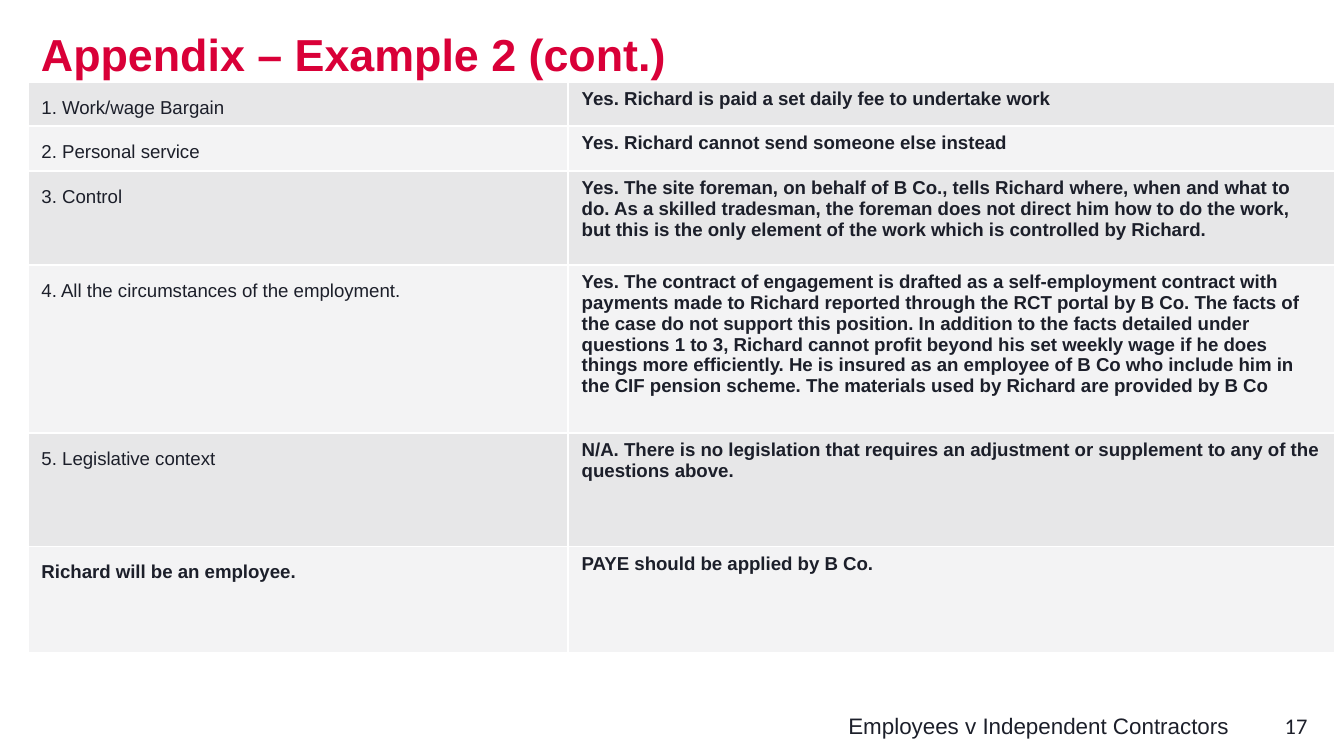
"""Build the appendix slide that tests whether a worker is an employee."""
from dataclasses import dataclass

from lxml.etree import SubElement
from pptx import Presentation
from pptx.dml.color import RGBColor as Color
from pptx.enum.text import MSO_ANCHOR as Anchor, MSO_AUTO_SIZE as AutoSize, PP_ALIGN as Align
from pptx.oxml.ns import qn
from pptx.slide import Slide
from pptx.util import Cm, Length, Pt


@dataclass(frozen=True)
class Theme:
    heading: Color = Color.from_string("D90038")
    text: Color = Color.from_string("1C1F2A")
    border: str = "FFFFFF"
    bands: tuple = (Color.from_string("E7E7E8"), Color.from_string("F3F3F4"))
    font: str = "Arial"
    number_font: str = "Calibri"
    title_size: Length = Pt(24)
    footer_size: Length = Pt(12)
    table_size: Length = Pt(10)
    question_spacing: Length = Pt(15.8)
    border_width: Length = Pt(1)


@dataclass(frozen=True)
class Row:
    question: str
    answer: str
    height: Length
    bold_question: bool = False


@dataclass(frozen=True)
class Label:
    text: str
    left: Length
    width: Length
    font: str
    align: Align = Align.LEFT


THEME = Theme()
TABLE_LEFT, TABLE_TOP = Cm(0.53), Cm(1.55)
COLUMN_WIDTHS = (Cm(10.21), Cm(14.48))
ROWS = (
    Row("1. Work/wage Bargain", "Yes. Richard is paid a set daily fee to undertake work", Cm(0.83)),
    Row("2. Personal service", "Yes. Richard cannot send someone else instead", Cm(0.85)),
    Row("3. Control",
        "Yes. The site foreman, on behalf of B Co., tells Richard where, when and what to do. "
        "As a skilled tradesman, the foreman does not direct him how to do the work, but this "
        "is the only element of the work which is controlled by Richard.", Cm(1.78)),
    Row("4. All the circumstances of the employment.",
        "Yes. The contract of engagement is drafted as a self-employment contract with payments "
        "made to Richard reported through the RCT portal by B Co. The facts of the case do not "
        "support this position. In addition to the facts detailed under questions 1 to 3, Richard "
        "cannot profit beyond his set weekly wage if he does things more efficiently. He is insured "
        "as an employee of B Co who include him in the CIF pension scheme. The materials used by "
        "Richard are provided by B Co", Cm(3.18)),
    Row("5. Legislative context",
        "N/A. There is no legislation that requires an adjustment or supplement to any of the "
        "questions above.", Cm(2.14)),
    Row("Richard will be an employee.", "PAYE should be applied by B Co.", Cm(2), True),
)
LABELS = (
    Label("Employees v Independent Contractors ", Cm(15.57), Cm(8.03), THEME.font, Align.RIGHT),
    Label("17", Cm(24.03), Cm(1.37), THEME.number_font),
)


def style(paragraph, size: Length, color: Color, name: str = THEME.font, bold: bool = False) -> None:
    """Set the font of a whole paragraph."""
    font = paragraph.font
    font.name, font.size, font.bold = name, size, bold
    font.color.rgb = color


def add_title(slide: Slide, text: str) -> None:
    """Place and format the title placeholder."""
    title = slide.shapes.title
    title.left, title.top, title.width, title.height = Cm(0.52), Cm(0.3), Cm(24.87), Cm(1.25)
    frame = title.text_frame
    frame.text = text
    frame.auto_size = AutoSize.NONE
    frame.vertical_anchor = Anchor.TOP
    frame.margin_top = Cm(0.21)
    paragraph = frame.paragraphs[0]
    paragraph.alignment = Align.LEFT
    style(paragraph, THEME.title_size, THEME.heading, bold=True)


def add_label(slide: Slide, label: Label) -> None:
    """Add one text box on the footer line."""
    frame = slide.shapes.add_textbox(label.left, Cm(13.34), label.width, Cm(0.7)).text_frame
    frame.word_wrap = True
    frame.text = label.text
    paragraph = frame.paragraphs[0]
    paragraph.alignment = label.align
    style(paragraph, THEME.footer_size, THEME.text, label.font)


def fill_cell(cell, text: str, bold: bool, band: Color) -> None:
    """Write one cell with its borders and band colour."""
    properties = cell._tc.get_or_add_tcPr()
    for side in ("a:lnL", "a:lnR", "a:lnT", "a:lnB"):
        line = SubElement(properties, qn(side), w=str(THEME.border_width))
        SubElement(SubElement(line, qn("a:solidFill")), qn("a:srgbClr"), val=THEME.border)
    cell.fill.solid()
    cell.fill.fore_color.rgb = band
    cell.text = text
    style(cell.text_frame.paragraphs[0], THEME.table_size, THEME.text, bold=bold)


def add_table(slide: Slide, rows: tuple[Row, ...]) -> None:
    """Add the table of questions and answers."""
    table = slide.shapes.add_table(
        len(rows), len(COLUMN_WIDTHS), TABLE_LEFT, TABLE_TOP,
        sum(COLUMN_WIDTHS), sum(row.height for row in rows)).table
    table.first_row = table.horz_banding = False
    for column, width in zip(table.columns, COLUMN_WIDTHS):
        column.width = width
    for index, row in enumerate(rows):
        table.rows[index].height = row.height
        band = THEME.bands[index % len(THEME.bands)]
        question = table.cell(index, 0)
        fill_cell(question, row.question, row.bold_question, band)
        question.text_frame.paragraphs[0].line_spacing = THEME.question_spacing
        fill_cell(table.cell(index, 1), row.answer, True, band)


def main() -> None:
    """Build and save the presentation."""
    presentation = Presentation()
    presentation.slide_width, presentation.slide_height = Cm(25.4), Cm(14.29)
    slide = presentation.slides.add_slide(presentation.slide_layouts.get_by_name("Title Only"))
    add_title(slide, "Appendix – Example 2 (cont.)")
    add_table(slide, ROWS)
    for label in LABELS:
        add_label(slide, label)
    presentation.save("out.pptx")


if __name__ == "__main__":
    main()
